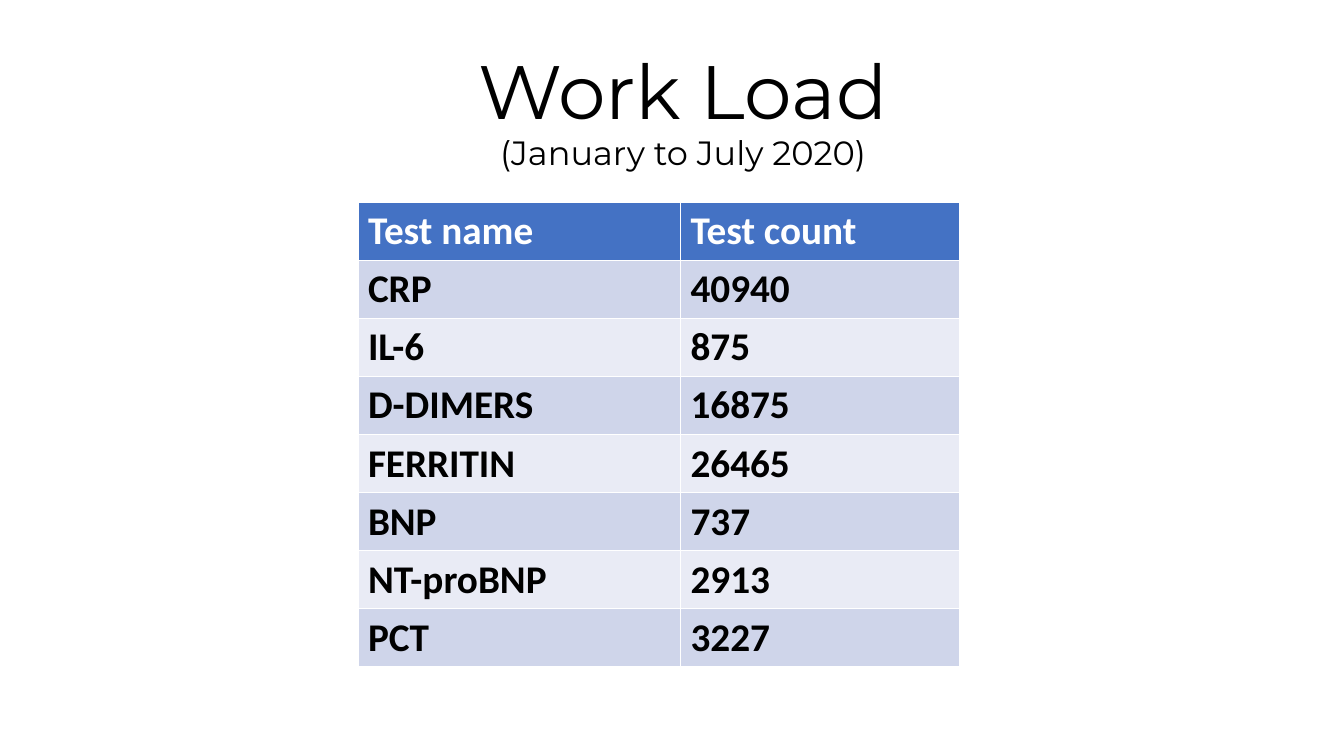
import pptx
import pptx.dml.color
import pptx.enum.text
import pptx.util

Inches = pptx.util.Inches
WORKLOAD = [
    ("Test name", "Test count"),
    ("CRP", "40940"),
    ("IL-6", "875"),
    ("D-DIMERS", "16875"),
    ("FERRITIN", "26465"),
    ("BNP", "737"),
    ("NT-proBNP", "2913"),
    ("PCT", "3227"),
]


def colour(hex_string):
    return pptx.dml.color.RGBColor.from_string(hex_string)


class WorkloadSlide:
    """Hold the style and the current slide, and add each kind of element."""

    heading_font = "Montserrat"
    table_font = "Calibri"
    ink = "000000"
    header_ink = "FFFFFF"
    header_fill = "4472C4"
    band_fills = ("E9EBF5", "CFD5EA")

    def __init__(self, presentation):
        self.slide = presentation.slides.add_slide(presentation.slide_layouts[5])

    def format_run(self, run, font, size, ink, bold=False):
        run.font.name = font
        run.font.size = pptx.util.Pt(size)
        run.font.color.rgb = colour(ink)
        run.font.bold = bold

    def add_heading(self, lines, sizes, left, top, width, height):
        heading = self.slide.shapes.title
        heading.left, heading.top = Inches(left), Inches(top)
        heading.width, heading.height = Inches(width), Inches(height)
        frame = heading.text_frame
        frame.text = "\v".join(lines)
        frame.auto_size = pptx.enum.text.MSO_AUTO_SIZE.NONE
        frame.vertical_anchor = pptx.enum.text.MSO_ANCHOR.MIDDLE
        paragraph = frame.paragraphs[0]
        paragraph.alignment = pptx.enum.text.PP_ALIGN.CENTER
        paragraph.line_spacing = 0.9
        for run, size in zip(paragraph.runs, sizes):
            self.format_run(run, self.heading_font, size, self.ink)

    def add_table(self, rows, column_widths, left, top, height):
        table = self.slide.shapes.add_table(
            len(rows), len(column_widths), Inches(left), Inches(top),
            Inches(sum(column_widths)), Inches(height)).table
        for column, width in zip(table.columns, column_widths):
            column.width = Inches(width)
        for row_index, row in enumerate(rows):
            is_header = row_index == 0
            fill = self.header_fill if is_header else self.band_fills[row_index % 2]
            ink = self.header_ink if is_header else self.ink
            for column_index, value in enumerate(row):
                cell = table.cell(row_index, column_index)
                cell.fill.solid()
                cell.fill.fore_color.rgb = colour(fill)
                cell.text_frame.text = value
                run = cell.text_frame.paragraphs[0].runs[0]
                self.format_run(run, self.table_font, 28, ink, bold=True)


def main():
    presentation = pptx.Presentation()
    presentation.slide_width = Inches(13.33)
    presentation.slide_height = Inches(7.5)
    workload = WorkloadSlide(presentation)
    workload.add_heading(("Work Load", "(January to July 2020)"), (54, 24),
                         0.21, 0.4, 13.13, 1.45)
    workload.add_table(WORKLOAD, (3.2, 2.77), 3.55, 2.01, 4.53)
    presentation.save("out.pptx")


if __name__ == "__main__":
    main()
